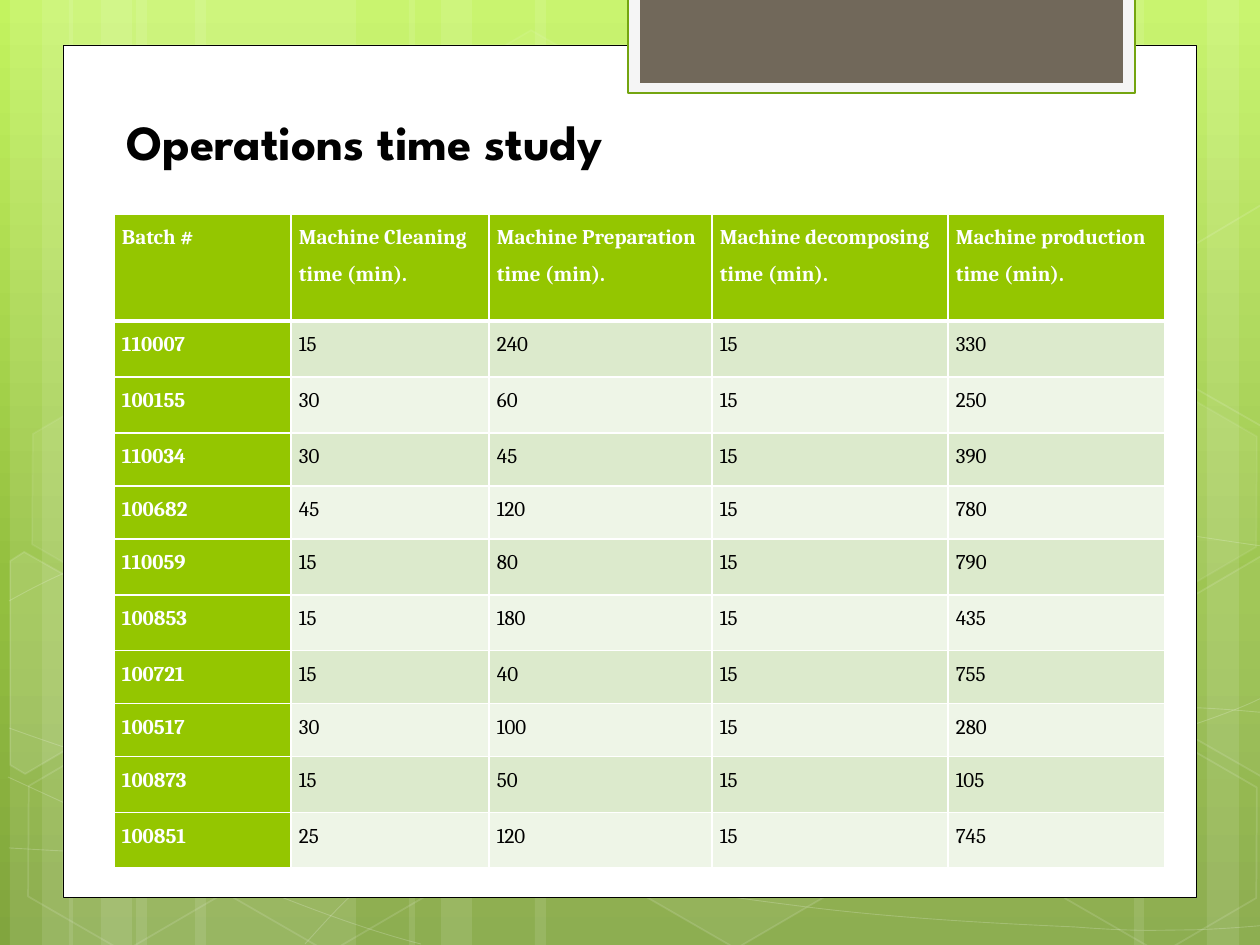
import math
from dataclasses import dataclass
from typing import Optional

import lxml.etree
import pptx
import pptx.dml.color
import pptx.enum.shapes
import pptx.enum.text
import pptx.oxml.ns
import pptx.util

RGBColor = pptx.dml.color.RGBColor
MSO_SHAPE = pptx.enum.shapes.MSO_SHAPE
qn = pptx.oxml.ns.qn

SCALE = 914400 / 126
W, H = 1260, 945
TILT = 30
WHITE = RGBColor(0xFF, 0xFF, 0xFF)
BLACK = RGBColor(0, 0, 0)
GREEN = RGBColor(0x94, 0xC6, 0x00)
DARK_GREEN = RGBColor(0x74, 0xA5, 0x10)
BANDS = RGBColor(0xDC, 0xEA, 0xCC), RGBColor(0xEE, 0xF5, 0xE7)
PALE_GREY = RGBColor(0xF5, 0xF5, 0xF5)
TAUPE = RGBColor(0x71, 0x68, 0x5A)
SKY = [(0, RGBColor(0xC3, 0xF3, 0x5F)), (62, RGBColor(0x93, 0xBF, 0x3F)), (100, RGBColor(0x81, 0xA5, 0x3E))]


@dataclass(frozen=True)
class Style:
    fill: Optional[RGBColor] = None
    line: Optional[RGBColor] = None
    width: float = 1
    fill_alpha: int = 100
    line_alpha: int = 100


@dataclass(frozen=True)
class Box:
    x: int
    y: int
    w: int
    h: int
    style: Style


@dataclass(frozen=True)
class CutHexagon:
    center: tuple
    points: list
    style: Style


def glass(fill_alpha: int, line_alpha: int) -> Style:
    return Style(WHITE if fill_alpha else None, WHITE, 1, fill_alpha, line_alpha)


STRIPE = Style(WHITE, fill_alpha=10)
STRIPES = [(136, 220), (10, 63), (42, 105), (195, 220), (69, 63), (101, 105),
           (924, 220), (1207, 63), (1134, 105), (535, 389), (409, 63), (441, 105)]
CURVE = Style(line=WHITE, width=0.5, line_alpha=20)
CURVES = [
    [(9, 848), (77, 852), (145, 856), (239, 854), (334, 853), (451, 850), (577, 838),
     (703, 826), (882, 801), (998, 777), (1113, 753), (1231, 716), (1269, 694)],
    [(9, 601), (45, 581), (82, 562), (152, 543), (224, 524), (326, 499), (437, 488),
     (549, 479), (685, 478), (824, 488), (963, 498), (1193, 537), (1269, 547)],
    [(8, 777), (160, 847), (311, 916), (421, 944)],
    [(9, 728), (48, 742), (88, 756), (161, 776), (234, 795), (344, 827), (450, 848),
     (554, 869), (687, 892), (791, 905), (896, 919), (1008, 924), (1075, 927),
     (1140, 932), (1158, 930), (1191, 930), (1223, 929), (1246, 927), (1269, 925)],
    [(305, 944), (328, 919), (350, 893), (381, 871), (411, 848), (454, 823), (489, 805),
     (524, 788), (546, 779), (592, 767), (638, 755), (722, 737), (766, 728),
     (811, 719), (818, 719), (857, 717), (896, 713), (958, 709), (1000, 708),
     (1045, 707), (1116, 708), (1116, 708), (1144, 708), (1173, 708), (1201, 708),
     (1223, 709), (1245, 711), (1256, 712), (1268, 713), (1264, 712), (1268, 713)],
]
HEXAGONS = [Box(x, y, 220, 192, glass(fill, line)) for x, y, fill, line in [
    (421, 45, 4, 8), (626, 742, 6, 12), (14, 745, 0, 12), (18, 393, 7, 8),
    (219, 746, 0, 12), (949, 571, 10, 12), (1051, 747, 0, 12), (1051, 396, 7, 8)]]
CUT_HEXAGONS = [
    CutHexagon((45, 674), [(10, 561), (24, 552), (121, 607), (120, 718), (25, 774), (10, 765)], glass(10, 12)),
    CutHexagon((1241, 655), [(1167, 611), (1261, 556), (1271, 562), (1271, 772), (1263, 777), (1167, 722)],
               glass(4, 12)),
    CutHexagon((1241, 304), [(1167, 261), (1261, 205), (1272, 212), (1271, 422), (1263, 427), (1167, 372)],
               glass(0, 12)),
]
PANELS = [Box(63, 45, 1134, 853, Style(WHITE, BLACK, 0.5)),
          Box(628, -3, 507, 96, Style(PALE_GREY, DARK_GREEN, 1.25)),
          Box(640, -3, 483, 86, Style(TAUPE))]

COLUMNS = [177, 198, 223, 236, 217]
ROWS = [107, 56, 56, 53, 53, 56, 56, 53, 53, 56, 55]
DATA = [
    ("Batch #", "Machine Cleaning time (min).", "Machine Preparation time (min).",
     "Machine decomposing time (min).", "Machine production time (min)."),
    (110007, 15, 240, 15, 330),
    (100155, 30, 60, 15, 250),
    (110034, 30, 45, 15, 390),
    (100682, 45, 120, 15, 780),
    (110059, 15, 80, 15, 790),
    (100853, 15, 180, 15, 435),
    (100721, 15, 40, 15, 755),
    (100517, 30, 100, 15, 280),
    (100873, 15, 50, 15, 105),
    (100851, 25, 120, 15, 745),
]


def px(n: float) -> int:
    return round(n * SCALE)


def sub(parent, tag: str, **attrs):
    return lxml.etree.SubElement(parent, qn(tag), {k: str(v) for k, v in attrs.items()})


def paint(sp, style: Style) -> None:
    sp.shadow.inherit = False
    if style.fill is None:
        sp.fill.background()
    else:
        sp.fill.solid()
        sp.fill.fore_color.rgb = style.fill
    if style.line is None:
        sp.line.fill.background()
    else:
        sp.line.color.rgb = style.line
        sp.line.width = pptx.util.Pt(style.width)
    for prefix, alpha in (("", style.fill_alpha), (qn("a:ln") + "/", style.line_alpha)):
        color = sp.element.spPr.find(prefix + qn("a:solidFill") + "/" + qn("a:srgbClr"))
        if color is not None and alpha < 100:
            sub(color, "a:alpha", val=alpha * 1000)


def add_box(s, box: Box, kind=MSO_SHAPE.RECTANGLE):
    sp = s.shapes.add_shape(kind, px(box.x), px(box.y), px(box.w), px(box.h))
    paint(sp, box.style)
    return sp


def add_outline(s, points: list, style: Style, close: bool):
    corners = [(px(x), px(y)) for x, y in points]
    builder = s.shapes.build_freeform(*corners[0])
    builder.add_line_segments(corners[1:], close=close)
    sp = builder.convert_to_shape()
    paint(sp, style)
    return sp


def add_curve(s, knots: list) -> None:
    sp = add_outline(s, knots, CURVE, close=False)
    outline = next(sp.element.iter(qn("a:path")))
    lines = outline.findall(qn("a:lnTo"))
    for i in range(0, len(lines), 3):
        bezier = sub(outline, "a:cubicBezTo")
        for line in lines[i:i + 3]:
            bezier.append(line[0])
            outline.remove(line)


def add_cut_hexagon(s, hexagon: CutHexagon) -> None:
    cx, cy = hexagon.center
    cos, sin = math.cos(math.radians(TILT)), math.sin(math.radians(TILT))
    upright = [(cx + (x - cx) * cos + (y - cy) * sin, cy - (x - cx) * sin + (y - cy) * cos)
               for x, y in hexagon.points]
    add_outline(s, upright, hexagon.style, close=True).rotation = TILT


def add_background(s) -> None:
    fill = s.background.fill
    fill.gradient()
    fill.gradient_angle = 270
    stops = next(s.element.iter(qn("a:gsLst")))
    for stop in list(stops):
        stops.remove(stop)
    for pos, color in SKY:
        sub(sub(stops, "a:gs", pos=pos * 1000), "a:srgbClr", val=color)


def format_run(r, font: str, size: int, color: RGBColor, bold: bool) -> None:
    r.font.name, r.font.size, r.font.bold = font, pptx.util.Pt(size), bold
    r.font.color.rgb = color


def add_title(s, text: str) -> None:
    tf = s.shapes.add_textbox(px(114), px(105), px(551), px(72)).text_frame
    tf.word_wrap = False
    tf.auto_size = pptx.enum.text.MSO_AUTO_SIZE.SHAPE_TO_FIT_TEXT
    tf.text = text
    format_run(tf.paragraphs[0].runs[0], "League Spartan", 28, BLACK, True)


def fill_cell(cell, value, row: int, col: int) -> None:
    tcPr = cell._tc.get_or_add_tcPr()
    for side in "LRTB":
        thick = (row, side) in ((0, "B"), (1, "T"))
        ln = sub(tcPr, f"a:ln{side}", w=pptx.util.Pt(3 if thick else 1))
        sub(sub(ln, "a:solidFill"), "a:srgbClr", val=WHITE)
    heading = row == 0 or col == 0
    cell.fill.solid()
    cell.fill.fore_color.rgb = GREEN if heading else BANDS[(row - 1) % 2]
    cell.margin_left = cell.margin_right = px(8)
    cell.margin_top = cell.margin_bottom = 0
    cell.text_frame.text = str(value)
    p = cell.text_frame.paragraphs[0]
    p.line_spacing = 1.5
    format_run(p.runs[0], "Cambria", 12, WHITE if heading else BLACK, heading)


def add_time_table(s) -> None:
    table = s.shapes.add_table(len(ROWS), len(COLUMNS), px(114), px(214), px(sum(COLUMNS)), px(sum(ROWS))).table
    for column, width in zip(table.columns, COLUMNS):
        column.width = px(width)
    for i, (row, height) in enumerate(zip(table.rows, ROWS)):
        row.height = px(height)
        for j, value in enumerate(DATA[i]):
            fill_cell(table.cell(i, j), value, i, j)


def main() -> None:
    prs = pptx.Presentation()
    prs.slide_width, prs.slide_height = px(W), px(H)
    s = prs.slides.add_slide(prs.slide_layouts[6])
    add_background(s)
    for x, w in STRIPES:
        add_box(s, Box(x, 0, w, H, STRIPE))
    for knots in CURVES:
        add_curve(s, knots)
    for box in HEXAGONS:
        sp = add_box(s, box, MSO_SHAPE.HEXAGON)
        sp.adjustments[0] = 0.285
        sp.rotation = TILT
    for hexagon in CUT_HEXAGONS:
        add_cut_hexagon(s, hexagon)
    for box in PANELS:
        add_box(s, box)
    add_title(s, "Operations time study")
    add_time_table(s)
    prs.save("out.pptx")


if __name__ == "__main__":
    main()
